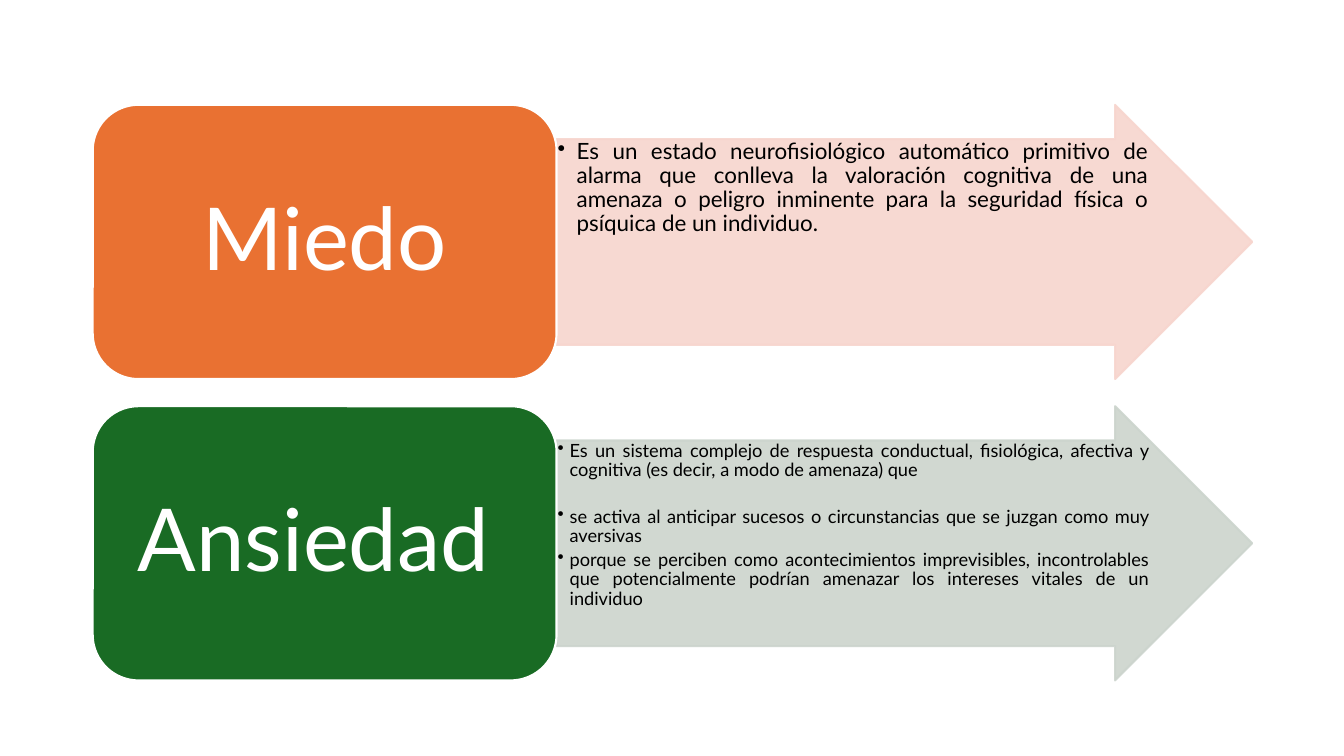
"""Build a slide that defines fear and anxiety with two labelled arrows."""
from lxml import etree
from pptx import Presentation, util as u
from pptx.dml.color import RGBColor
from pptx.enum import shapes, text
from pptx.oxml import ns

WHITE = RGBColor(0xFF, 0xFF, 0xFF)
BLACK = RGBColor(0, 0, 0)
ORANGE = RGBColor(0xE9, 0x71, 0x32)
PINK = RGBColor(0xF7, 0xD5, 0xCE)
GREEN = RGBColor(0x19, 0x6B, 0x24)
SAGE = RGBColor(0xCC, 0xD4, 0xCD)
FONT = "Lato"

CONCEPTS = [
    {"term": "Miedo", "color": ORANGE, "tint": PINK, "size": 16, "indent": 0.19,
     "points": [("Es un estado neurofisiológico automático primitivo de alarma que conlleva "
                 "la valoración cognitiva de una amenaza o peligro inminente para la "
                 "seguridad física o psíquica de un individuo. ", 2.5)]},
    {"term": "Ansiedad ", "color": GREEN, "tint": SAGE, "size": 13, "indent": 0.12,
     "points": [("Es un sistema complejo de respuesta conductual, fisiológica, afectiva y "
                 "cognitiva (es decir, a modo de amenaza) que", 19),
                ("se activa al anticipar sucesos o circunstancias que se juzgan como muy "
                 "aversivas", 2.5),
                ("porque se perciben como acontecimientos imprevisibles, incontrolables que "
                 "potencialmente podrían amenazar los intereses vitales de un individuo", 2.5)]},
]

LEFT, TOP, PITCH = 0.92, 1.04, 2.99
TERM_WIDTH, ARROW_WIDTH, HEIGHT = 4.6, 6.9, 2.72
SHAFT = 0.75
ARROW_LEFT = LEFT + TERM_WIDTH
POINTS_WIDTH = ARROW_WIDTH - HEIGHT * (1 - SHAFT) * 1.5


def add_block(slide, preset, left, top, width, fill, line):
    block = slide.shapes.add_shape(
        preset, u.Inches(left), u.Inches(top), u.Inches(width), u.Inches(HEIGHT))
    block.shadow.inherit = False
    block.fill.solid()
    block.fill.fore_color.rgb = fill
    block.line.color.rgb = line
    block.line.width = u.Pt(1.5)
    return block


def set_insets(frame, across, down):
    frame.word_wrap = True
    frame.margin_left = frame.margin_right = u.Inches(across)
    frame.margin_top = frame.margin_bottom = u.Inches(down)


def write(paragraph, words, size, color, alignment):
    paragraph.alignment = alignment
    paragraph.line_spacing = 0.9
    run = paragraph.add_run()
    run.text = words
    run.font.name = FONT
    run.font.size = u.Pt(size)
    run.font.color.rgb = color


def add_arrow(slide, top, tint):
    arrow = add_block(slide, shapes.MSO_SHAPE.RIGHT_ARROW, ARROW_LEFT, top, ARROW_WIDTH, tint, tint)
    arrow.adjustments[0] = SHAFT
    arrow.adjustments[1] = 0.5
    for color in arrow.element.spPr.iter(ns.qn("a:srgbClr")):
        etree.SubElement(color, ns.qn("a:alpha"), val="90000")


def add_points(slide, top, concept):
    box = slide.shapes.add_textbox(
        u.Inches(ARROW_LEFT), u.Inches(top + HEIGHT * (1 - SHAFT) / 2),
        u.Inches(POINTS_WIDTH), u.Inches(HEIGHT * SHAFT))
    frame = box.text_frame
    set_insets(frame, 0.01, 0.01)
    indent = u.Inches(concept["indent"])
    for number, (words, space_after) in enumerate(concept["points"]):
        point = frame.add_paragraph() if number else frame.paragraphs[0]
        point.level = 1
        properties = point._p.get_or_add_pPr()
        properties.set("marL", str(indent))
        properties.set("indent", str(-indent))
        etree.SubElement(properties, ns.qn("a:buChar"), char="•")
        point.space_after = u.Pt(space_after)
        write(point, words, concept["size"], BLACK, text.PP_ALIGN.JUSTIFY)


def add_term(slide, top, concept):
    term = add_block(slide, shapes.MSO_SHAPE.ROUNDED_RECTANGLE, LEFT, top, TERM_WIDTH,
                     concept["color"], WHITE)
    frame = term.text_frame
    set_insets(frame, 0.26, 0.13)
    frame.vertical_anchor = text.MSO_ANCHOR.MIDDLE
    write(frame.paragraphs[0], concept["term"], 62, WHITE, text.PP_ALIGN.CENTER)


def main():
    deck = Presentation()
    deck.slide_width, deck.slide_height = u.Inches(13.33), u.Inches(7.5)
    slide = deck.slides.add_slide(deck.slide_layouts[6])
    for row, concept in enumerate(CONCEPTS):
        top = TOP + row * PITCH
        add_arrow(slide, top, concept["tint"])
        add_points(slide, top, concept)
        add_term(slide, top, concept)
    deck.save("out.pptx")


if __name__ == "__main__":
    main()
